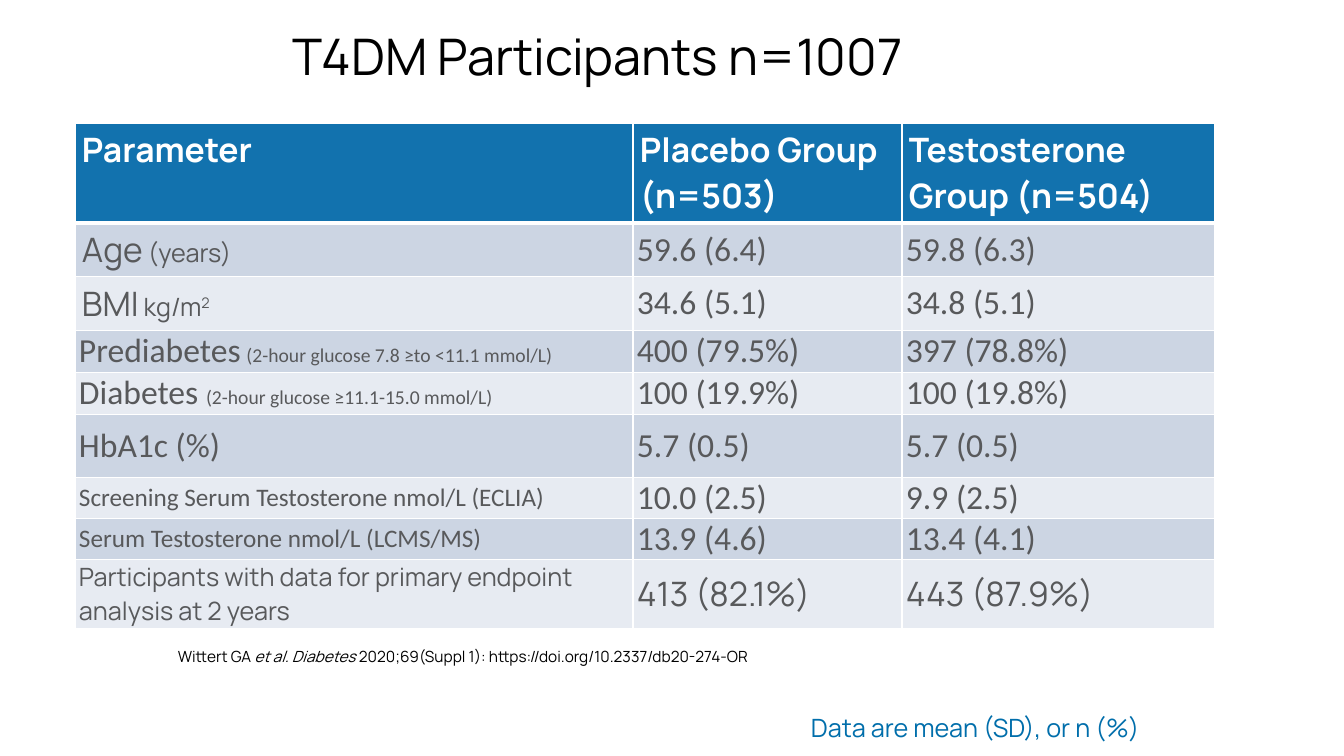
"""Baseline table of the T4DM trial participants."""
from lxml.etree import SubElement
from pptx import Presentation
from pptx.dml.color import RGBColor
from pptx.enum.text import MSO_ANCHOR
from pptx.oxml.ns import qn
from pptx.util import Emu, Pt

WHITE = RGBColor(0xFF, 0xFF, 0xFF)
BLACK = RGBColor(0x00, 0x00, 0x00)
GREY = RGBColor(0x58, 0x59, 0x5B)
HEADER_BLUE = RGBColor(0x12, 0x72, 0xAE)
NOTE_BLUE = RGBColor(0x00, 0x6E, 0xAB)
BANDS = [RGBColor(0xE7, 0xEB, 0xF2), RGBColor(0xCC, 0xD5, 0xE3)]
MANROPE, CALIBRI = "Manrope", "Calibri"


def px(count):
    return Emu(round(count * 914400 / 100.8))


def style(font, face, size, color, bold=False):
    font.name, font.size, font.bold = face, Pt(size), bold
    font.color.rgb = color


presentation = Presentation()
presentation.slide_width, presentation.slide_height = px(1344), px(756)
slide = presentation.slides.add_slide(presentation.slide_layouts[6])

headings = ["Parameter", "Placebo Group (n=503)", "Testosterone Group (n=504)"]
parameters = [
    (41, MANROPE, [("Age", 24), (" (years)", 18)],
     CALIBRI, "59.6 (6.4)", "59.8 (6.3)"),
    (41, MANROPE, [("BMI", 24), (" kg/m", 18), ("2", 18)],
     CALIBRI, "34.6 (5.1)", "34.8 (5.1)"),
    (42, CALIBRI, [("Prediabetes", 24), (" ", 18), ("(2-hour glucose 7.8 ≥to <11.1 mmol/L)", 14)],
     CALIBRI, "400 (79.5%)", "397 (78.8%)"),
    (42, CALIBRI, [("Diabetes ", 24), ("(2-hour glucose ≥11.1-15.0 mmol/L)", 14)],
     CALIBRI, "100 (19.9%)", "100 (19.8%)"),
    (63, CALIBRI, [("HbA1c (%)", 24)],
     CALIBRI, "5.7 (0.5)", "5.7 (0.5)"),
    (31, CALIBRI, [("Screening Serum Testosterone nmol/L (ECLIA)", 18)],
     CALIBRI, "10.0 (2.5)", "9.9 (2.5)"),
    (31, CALIBRI, [("Serum Testosterone nmol/L (LCMS/MS)", 18)],
     CALIBRI, "13.9 (4.6)", "13.4 (4.1)"),
    (63, MANROPE, [("Participants with data for primary endpoint analysis at 2 years", 18)],
     MANROPE, "413 (82.1%)", "443 (87.9%)"),
]

table = slide.shapes.add_table(
    len(parameters) + 1, len(headings), px(75), px(123), px(1140), px(427)).table
for column, width in zip(table.columns, (558, 269, 313)):
    column.width = px(width)

table.rows[0].height = px(73)
for cell, heading in zip(table.rows[0].cells, headings):
    cell.text = heading
    style(cell.text_frame.paragraphs[0].font, MANROPE, 24, WHITE, True)

for number, (height, label_face, label, value_face, *values) in enumerate(parameters, 1):
    table.rows[number].height = px(height)
    label_line = table.cell(number, 0).text_frame.paragraphs[0]
    for words, size in label:
        run = label_line.add_run()
        run.text = words
        style(run.font, label_face, size, GREY)
        if words == "2":
            run.font._element.set("baseline", "30000")
    for place, value in enumerate(values, 1):
        cell = table.cell(number, place)
        cell.text = value
        style(cell.text_frame.paragraphs[0].font, value_face, 24, GREY)

for number, row in enumerate(table.rows):
    for place, cell in enumerate(row.cells):
        roomy = number == 0 or (place == 0 and number < 3)
        cell.margin_left = cell.margin_right = px(7 if roomy else 4)
        cell.margin_top = cell.margin_bottom = px(4 if roomy else 0)
        cell.vertical_anchor = MSO_ANCHOR.MIDDLE if number else MSO_ANCHOR.TOP
        properties = cell._tc.get_or_add_tcPr()
        for side in ("L", "R", "T", "B"):
            thick = (number, side) in ((0, "B"), (1, "T"))
            border = SubElement(properties, qn(f"a:ln{side}"), w=str(Pt(3 if thick else 1)))
            border_fill = SubElement(border, qn("a:solidFill"))
            SubElement(border_fill, qn("a:srgbClr"), val=str(WHITE))
        cell.fill.solid()
        cell.fill.fore_color.rgb = BANDS[number % 2] if number else HEADER_BLUE

captions = [
    ((283, 9, 711, 100), 36, BLACK, MSO_ANCHOR.MIDDLE, True,
     [("T4DM Participants n=1007", False)]),
    ((801, 707, 384, 40), 18, NOTE_BLUE, MSO_ANCHOR.TOP, False,
     [("Data are mean (SD), or n (%)", False)]),
    ((168, 642, 1079, 29), 11, BLACK, MSO_ANCHOR.TOP, True,
     [("Wittert GA ", False), ("et al. Diabetes", True),
      (" 2020;69(Suppl 1): https://doi.org/10.2337/db20-274-OR", False)]),
]
for box, size, color, anchor, wrap, pieces in captions:
    frame = slide.shapes.add_textbox(*map(px, box)).text_frame
    frame.word_wrap, frame.vertical_anchor = wrap, anchor
    line = frame.paragraphs[0]
    line.line_spacing = 0.9 if size == 36 else 1.0
    style(line.font, MANROPE, size, color)
    for words, italic in pieces:
        run = line.add_run()
        run.text = words
        if italic:
            run.font.italic = True

presentation.save("out.pptx")
